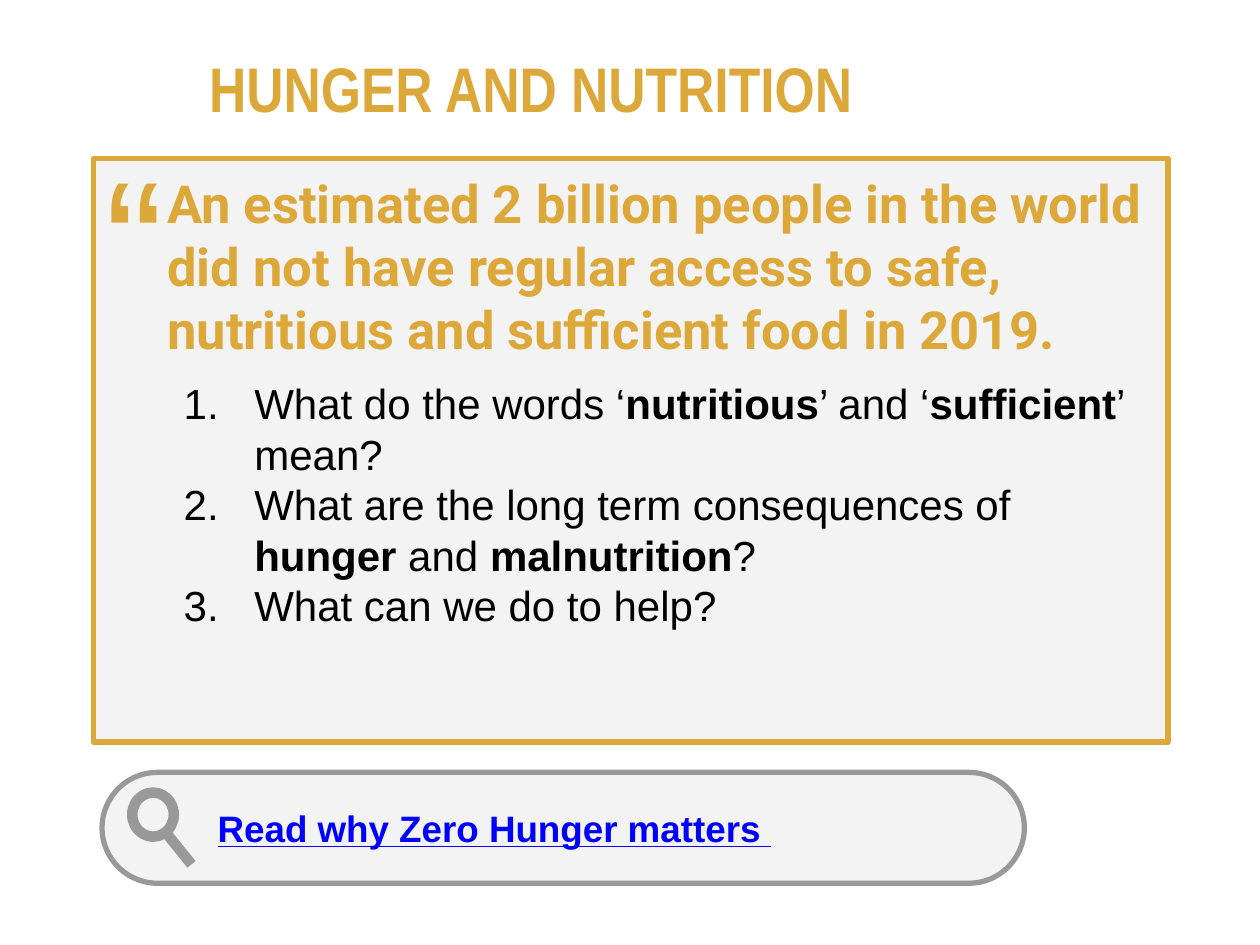
"""Build the hunger and nutrition slide with its quote, questions and reading link."""
from lxml import etree
from pptx import Presentation
from pptx.dml.color import RGBColor
from pptx.enum.shapes import MSO_CONNECTOR, MSO_SHAPE
from pptx.enum.text import MSO_ANCHOR, MSO_AUTO_SIZE, PP_ALIGN
from pptx.oxml.ns import qn
from pptx.util import Inches, Pt

RECT, PILL, RING = MSO_SHAPE.RECTANGLE, MSO_SHAPE.ROUNDED_RECTANGLE, MSO_SHAPE.OVAL
LINE = MSO_CONNECTOR.STRAIGHT
TOP, MID = MSO_ANCHOR.TOP, MSO_ANCHOR.MIDDLE
LEFT = PP_ALIGN.LEFT
FIXED, GROW = MSO_AUTO_SIZE.NONE, MSO_AUTO_SIZE.SHAPE_TO_FIT_TEXT

THEME = {
    "gold": RGBColor.from_string("DDA83A"),
    "pale": RGBColor.from_string("F3F3F3"),
    "grey": RGBColor.from_string("999999"),
    "link": RGBColor.from_string("0000FF"),
    "ink": RGBColor.from_string("000000"),
    "title": 36, "quote": 30, "mark": 100, "body": 24, "read": 21,
    "thin": Pt(3), "thick": Pt(6),
    "sans": "Arial", "narrow": "Arial Narrow", "lead": "Roboto",
}

deck = Presentation()
deck.slide_width, deck.slide_height = Inches(10), Inches(7.5)
COL, ROW = deck.slide_width / 100, deck.slide_height / 75
slide = deck.slides.add_slide(deck.slide_layouts[5])


def place(*cells):
    """Turn column and row pairs into lengths."""
    return [round(n * (ROW if i % 2 else COL)) for i, n in enumerate(cells)]


def write(para, text, size, color, bold=False, font="sans"):
    """Add one styled run."""
    run = para.add_run()
    run.text = text
    run.font.size, run.font.bold = Pt(THEME[size]), bold
    run.font.name, run.font.color.rgb = THEME[font], THEME[color]
    return run


title = slide.shapes.title
title.left, title.top, title.width, title.height = place(16.6, 3.8, 64.8, 6.3)
panel = slide.shapes.add_shape(RECT, *place(7.4, 12.6, 85.3, 46.3))
mark = slide.shapes.add_textbox(*place(7.4, 9.3, 5.9, 18.9))
group = slide.shapes.add_group_shape()
pill = group.shapes.add_shape(PILL, *place(8.1, 61.3, 73.2, 8.8))
pill.adjustments[0] = 0.5
lens = group.shapes.add_shape(RING, *place(10.5, 62.9, 3.3, 3.5))
handle = group.shapes.add_connector(LINE, *place(13.1, 66, 15.2, 68.6))

for shape, fill, line, width in (
    (panel, "pale", "gold", "thin"),
    (pill, "pale", "grey", "thin"),
    (lens, None, "grey", "thick"),
    (handle, None, "grey", "thick"),
):
    shape.line.color.rgb, shape.line.width = THEME[line], THEME[width]
    if shape is handle:
        etree.SubElement(shape.line._get_or_add_ln().getparent(), qn("a:effectLst"))
        continue
    shape.shadow.inherit = False
    if fill:
        shape.fill.solid()
        shape.fill.fore_color.rgb = THEME[fill]
    else:
        shape.fill.background()

for shape, anchor, pad, fit in (
    (title, MID, 0, FIXED),
    (panel, TOP, 1, FIXED),
    (mark, TOP, 1, GROW),
    (pill, MID, 1, FIXED),
):
    frame = shape.text_frame
    frame.word_wrap, frame.auto_size, frame.vertical_anchor = True, fit, anchor
    frame.margin_left = frame.margin_right = round(pad * COL)
    frame.margin_top = frame.margin_bottom = round(pad * ROW)
    frame.paragraphs[0].alignment = LEFT

write(title.text_frame.paragraphs[0], "HUNGER AND NUTRITION", "title", "gold", True, "narrow")
write(mark.text_frame.paragraphs[0], "“", "mark", "gold")

lead = panel.text_frame.paragraphs[0]
lead._p.get_or_add_pPr().set("marL", str(round(4.9 * COL)))
write(lead, "An estimated 2 billion people in the world did not have regular access to safe, "
      "nutritious and sufficient food in 2019.", "quote", "gold", True, "lead")

asks = (
    ("What do the words ‘", "nutritious", "’ and ‘", "sufficient", "’ mean?"),
    ("What are the long term consequences of ", "hunger", " and ", "malnutrition", "?"),
    ("What can we do to help?",),
)
for row, parts in enumerate(asks):
    para = panel.text_frame.add_paragraph()
    para.alignment = LEFT
    para.space_before = Pt(0 if row else 10)
    props = para._p.get_or_add_pPr()
    props.set("marL", str(round(11.8 * COL)))
    props.set("indent", str(round(-5.6 * COL)))
    tint = etree.SubElement(props, qn("a:buClr"))
    etree.SubElement(tint, qn("a:srgbClr"), val=str(THEME["ink"]))
    etree.SubElement(props, qn("a:buFont"), typeface=THEME["sans"])
    etree.SubElement(props, qn("a:buAutoNum"), type="arabicPeriod")
    for i, part in enumerate(parts):
        write(para, part, "body", "ink", i % 2 == 1)

read = pill.text_frame.paragraphs[0]
read._p.get_or_add_pPr().set("marL", str(round(6.9 * COL)))
write(read, "Read why Zero Hunger matters ", "read", "link", True).font.underline = True

deck.save("out.pptx")
